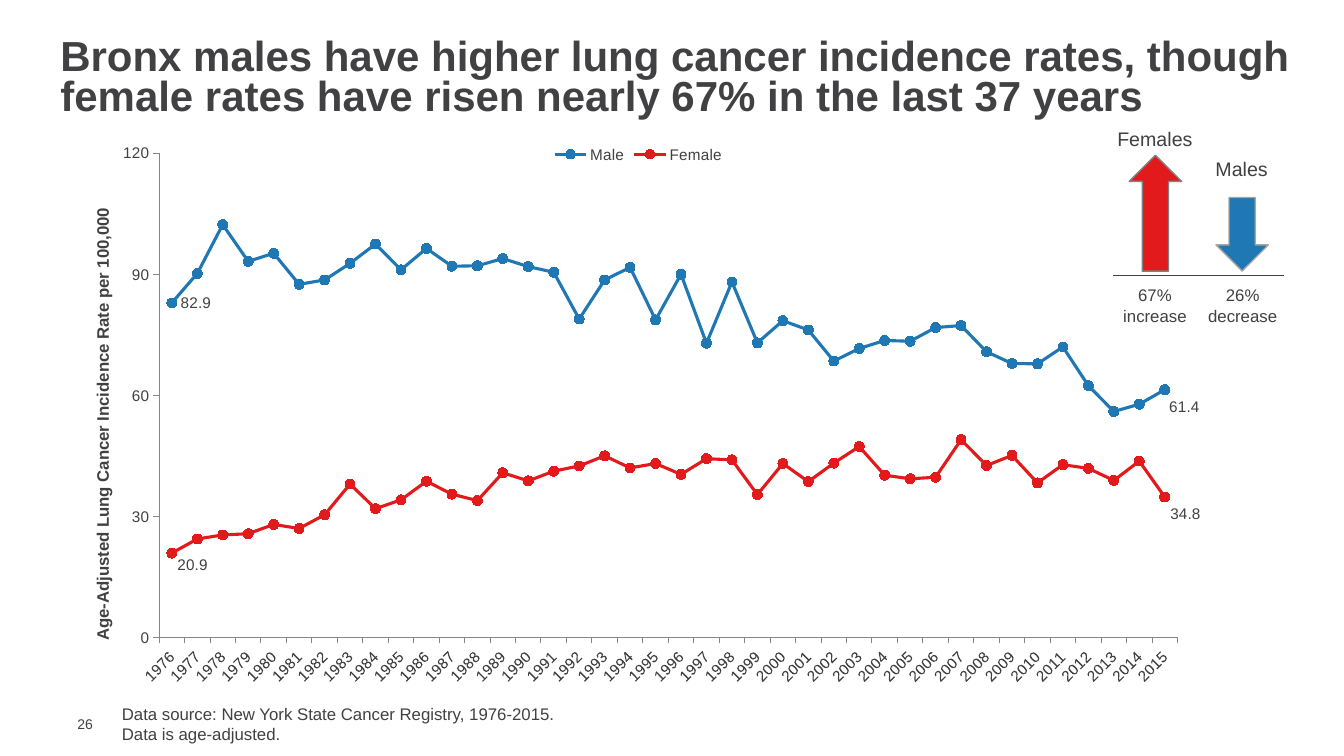
from lxml import etree
from pptx import Presentation
from pptx.chart.data import CategoryChartData
from pptx.dml.color import RGBColor
from pptx.enum.chart import XL_CHART_TYPE, XL_LABEL_POSITION, XL_LEGEND_POSITION
from pptx.enum.chart import XL_MARKER_STYLE, XL_TICK_MARK
from pptx.enum.shapes import MSO_CONNECTOR, MSO_SHAPE
from pptx.enum.text import MSO_ANCHOR, PP_ALIGN
from pptx.oxml.ns import qn
from pptx.util import Inches, Pt

FONT = "Arial"
TEXT = RGBColor(0x41, 0x40, 0x42)
AXIS = RGBColor(0x86, 0x86, 0x86)
MALE_BLUE = RGBColor(0x1F, 0x78, 0xB4)
FEMALE_RED = RGBColor(0xE3, 0x1A, 0x1C)
LIGHT_GREY = RGBColor(0xA6, 0xA6, 0xA6)
MID_GREY = RGBColor(0x80, 0x80, 0x80)

YEARS = range(1976, 2016)
MALE_RATES = [
    82.9, 90.2, 102.3, 93.2, 95.2, 87.5, 88.6, 92.7, 97.5, 91.1,
    96.4, 92, 92.1, 93.9, 91.9, 90.5, 78.9, 88.6, 91.7, 78.7,
    90, 72.9, 88.1, 73, 78.5, 76.2, 68.5, 71.6, 73.6, 73.4,
    76.8, 77.3, 70.8, 67.9, 67.8, 72, 62.4, 56, 57.8, 61.4]
FEMALE_RATES = [
    20.9, 24.4, 25.4, 25.7, 28, 27, 30.4, 38, 31.9, 34.1,
    38.7, 35.5, 33.9, 40.8, 38.8, 41.2, 42.5, 45, 42, 43.1,
    40.4, 44.3, 44, 35.4, 43.1, 38.6, 43.2, 47.3, 40.2, 39.3,
    39.7, 49, 42.6, 45.1, 38.3, 42.8, 41.9, 38.9, 43.7, 34.8]


def style_font(font, size, bold=False):
    font.name, font.size, font.bold = FONT, Pt(size), bold
    font.color.rgb = TEXT


def add_text(slide, box, lines, size, bold=False, align=PP_ALIGN.LEFT,
             anchor=MSO_ANCHOR.TOP, spacing=None):
    frame = slide.shapes.add_textbox(*map(Inches, box)).text_frame
    frame.word_wrap = True
    frame.vertical_anchor = anchor
    frame.text = "\n".join(lines)
    for paragraph in frame.paragraphs:
        paragraph.alignment = align
        paragraph.line_spacing = spacing
        style_font(paragraph.font, size, bold)
    return frame


def make_layout(**settings):
    """Build a c:layout element holding a manual layout."""
    layout = etree.Element(qn("c:layout"))
    manual = etree.SubElement(layout, qn("c:manualLayout"))
    for tag, value in settings.items():
        etree.SubElement(manual, qn(f"c:{tag}")).set("val", str(value))
    return layout


def place(parent, layout, after=None):
    """Put the layout in parent, first or behind the child tagged after."""
    for old in parent.findall(qn("c:layout")):
        parent.remove(old)
    if after:
        parent.find(qn(after)).addnext(layout)
    else:
        parent.insert(0, layout)


def style_series(series, color, label_shifts):
    """Colour a series; label_shifts maps point index to its label offset."""
    series.smooth = False
    series.format.line.color.rgb = color
    series.format.line.width = Pt(2.25)
    marker = series.marker
    marker.style, marker.size = XL_MARKER_STYLE.CIRCLE, 7
    marker.format.fill.solid()
    marker.format.fill.fore_color.rgb = color
    marker.format.line.color.rgb = color
    series.data_labels.show_value = False
    for index, (dx, dy) in label_shifts.items():
        label = series.points[index].data_label
        style_font(label.font, 11)
        label.position = XL_LABEL_POSITION.RIGHT
        if dx or dy:
            element = series.data_labels._element.xpath(
                f'c:dLbl[c:idx/@val="{index}"]')[0]
            place(element, make_layout(x=dx, y=dy), after="c:idx")


def style_axis(axis):
    axis.has_major_gridlines = False
    axis.major_tick_mark = XL_TICK_MARK.OUTSIDE
    axis.minor_tick_mark = XL_TICK_MARK.NONE
    axis.format.line.color.rgb = AXIS
    style_font(axis.tick_labels.font, 11)


def add_rate_chart(slide):
    data = CategoryChartData()
    data.categories = [str(year) for year in YEARS]
    data.add_series("Male", MALE_RATES)
    data.add_series("Female", FEMALE_RATES)
    box = map(Inches, (0.83, 1.33, 11.08, 5.6))
    chart = slide.shapes.add_chart(XL_CHART_TYPE.LINE_MARKERS, *box, data).chart
    style_font(chart.font, 18)
    chart.has_title = False
    chart.has_legend = True
    chart.legend.position = XL_LEGEND_POSITION.TOP
    chart.legend.include_in_layout = False
    style_font(chart.legend.font, 11)

    years, rates = chart.category_axis, chart.value_axis
    style_axis(years)
    years._element.find(qn("c:txPr")).find(qn("a:bodyPr")).set("rot", "-2700000")
    style_axis(rates)
    rates.minimum_scale, rates.maximum_scale, rates.major_unit = 0, 120, 30
    title = rates.axis_title
    title.text_frame.text = "Age-Adjusted Lung Cancer Incidence Rate per 100,000"
    style_font(title.text_frame.paragraphs[0].font, 12, bold=True)
    place(title._element,
          make_layout(xMode="edge", yMode="edge", x=0.005, y=0.12), after="c:tx")
    place(chart._chartSpace.chart.plotArea,
          make_layout(layoutTarget="inner", xMode="edge", yMode="edge",
                      x=0.068, y=0.034, w=0.918, h=0.858))

    plot = chart.plots[0]
    plot.vary_by_categories = False
    male, female = plot.series
    last = len(YEARS) - 1
    style_series(male, MALE_BLUE, {0: (0, 0), last: (-0.004, 0.03)})
    style_series(female, FEMALE_RED, {0: (-0.003, 0.02), last: (-0.003, 0.03)})


def add_arrow(slide, shape, box, fill, outline):
    arrow = slide.shapes.add_shape(shape, *map(Inches, box))
    arrow.shadow.inherit = False
    arrow.fill.solid()
    arrow.fill.fore_color.rgb = fill
    arrow.line.color.rgb = outline
    arrow.line.width = Pt(1)


def add_baseline(slide, left, right, y):
    line = slide.shapes.add_connector(
        MSO_CONNECTOR.STRAIGHT, *map(Inches, (left, y, right, y)))
    line.line.color.rgb = TEXT
    line.line.width = Pt(0.75)
    etree.SubElement(line._element.spPr, qn("a:effectLst"))


def add_change_summary(slide):
    center = PP_ALIGN.CENTER
    add_text(slide, (10.87, 1.21, 1.17, 0.34), ["Females"], 14, align=center)
    add_text(slide, (11.86, 1.51, 0.91, 0.34), ["Males"], 14, align=center)
    add_baseline(slide, 11.04, 12.73, 2.73)
    add_text(slide, (10.93, 2.78, 1.05, 0.5), ["67% increase"], 12, align=center)
    add_text(slide, (11.82, 2.78, 1.01, 0.5), ["26% decrease"], 12, align=center)
    add_arrow(slide, MSO_SHAPE.UP_ARROW, (11.2, 1.54, 0.52, 1.15),
              FEMALE_RED, MID_GREY)
    add_arrow(slide, MSO_SHAPE.DOWN_ARROW, (12.06, 1.96, 0.52, 0.73),
              MALE_BLUE, LIGHT_GREY)


def main():
    deck = Presentation()
    deck.slide_width, deck.slide_height = Inches(13.33), Inches(7.5)
    slide = deck.slides.add_slide(deck.slide_layouts[6])
    number = add_text(slide, (0.67, 7.1, 0.43, 0.17), ["26"], 10,
                      anchor=MSO_ANCHOR.MIDDLE)
    number.margin_top = number.margin_bottom = number.margin_right = 0
    add_text(slide, (0.5, 0.33, 12.42, 0.91),
             ["Bronx males have higher lung cancer incidence rates, though "
              "female rates have risen nearly 67% in the last 37 years"],
             30, bold=True, anchor=MSO_ANCHOR.MIDDLE, spacing=0.8)
    add_text(slide, (1.11, 6.93, 9.71, 0.5),
             ["Data source: New York State Cancer Registry, 1976-2015.",
              "Data is age-adjusted."], 12)
    add_rate_chart(slide)
    add_change_summary(slide)
    deck.save("out.pptx")


if __name__ == "__main__":
    main()
